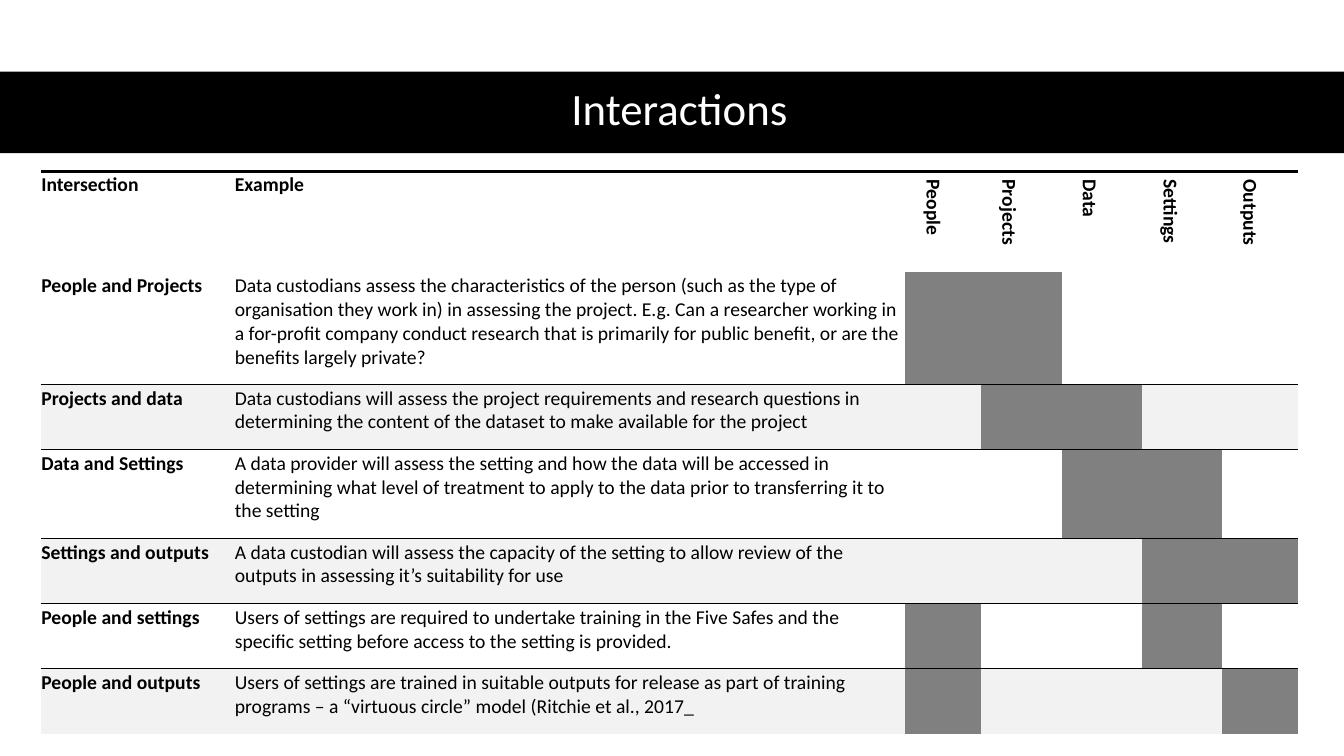
"""Build a slide with a table of how the five dimensions interact."""
from lxml import etree
from pptx import Presentation
from pptx import util as u
from pptx.dml.color import RGBColor
from pptx.enum import shapes, text
from pptx.oxml import ns

TITLE = "Interactions"
DIMENSIONS = ["People", "Projects", "Data", "Settings", "Outputs"]
HEADER = ["Intersection", "Example"] + DIMENSIONS
INTERACTIONS = [
    ("People and Projects",
     "Data custodians assess the characteristics of the person (such as the type of "
     "organisation they work in) in assessing the project. E.g. Can a researcher working in "
     "a for-profit company conduct research that is primarily for public benefit, or are the "
     "benefits largely private?", {"People", "Projects"}),
    ("Projects and data",
     "Data custodians will assess the project requirements and research questions in "
     "determining the content of the dataset to make available for the project",
     {"Projects", "Data"}),
    ("Data and Settings",
     "A data provider will assess the setting and how the data will be accessed in "
     "determining what level of treatment to apply to the data prior to transferring it to "
     "the setting", {"Data", "Settings"}),
    ("Settings and outputs",
     "A data custodian will assess the capacity of the setting to allow review of the "
     "outputs in assessing it’s suitability for use", {"Settings", "Outputs"}),
    ("People and settings",
     "Users of settings are required to undertake training in the Five Safes and the "
     "specific setting before access to the setting is provided.", {"People", "Settings"}),
    ("People and outputs",
     "Users of settings are trained in suitable outputs for release as part of training "
     "programs – a “virtuous circle” model (Ritchie et al., 2017_", {"People", "Outputs"}),
]
COL_WIDTHS = [1.92, 6.65, 0.75, 0.8, 0.8, 0.79, 0.75]
ROW_HEIGHTS = [1, 0.93] + [0.58] * 5
THEME = {"font": "Calibri", "title": 32, "body": 14, "ink": "000000", "paper": "FFFFFF",
         "band": "F2F2F2", "mark": "808080", "rule": 2.25, "hairline": 0.5}
NO_STYLE = "{2D5ABB26-0587-4C30-8999-92F81FD0307C}"


def rgb(name):
    return RGBColor.from_string(THEME[name])


def add_run(p, words, size, color, bold=False):
    r = p.add_run()
    r.text = words
    r.font.name = THEME["font"]
    r.font.size = u.Pt(THEME[size])
    r.font.bold = bold
    r.font.color.rgb = rgb(color)


def add_title(s):
    bar = s.shapes.add_shape(shapes.MSO_SHAPE.RECTANGLE, 0, u.Inches(0.71),
                             u.Inches(13.33), u.Inches(0.81))
    bar.shadow.inherit = False
    bar.fill.solid()
    bar.fill.fore_color.rgb = rgb("ink")
    bar.line.fill.background()
    sp = s.shapes.add_textbox(u.Inches(0.61), u.Inches(0.7), u.Inches(12.26), u.Inches(0.81))
    tf = sp.text_frame
    tf.word_wrap = True
    tf.vertical_anchor = text.MSO_ANCHOR.MIDDLE
    p = tf.paragraphs[0]
    p.alignment = text.PP_ALIGN.CENTER
    p.line_spacing = 0.9
    add_run(p, TITLE, "title", "paper")


def fill_cell(cell, fill):
    if fill:
        cell.fill.solid()
        cell.fill.fore_color.rgb = rgb(fill)
    else:
        cell.fill.background()


def write_cell(cell, words, bold, vertical=False):
    cell.margin_left, cell.margin_top = 0, u.Inches(0.02)
    cell.margin_right, cell.margin_bottom = u.Inches(0.05), u.Inches(0.16)
    p = cell.text_frame.paragraphs[0]
    if vertical:
        cell._tc.get_or_add_tcPr().set("vert", "vert")
        p._p.get_or_add_pPr().set("marL", str(u.Inches(0.08)))
    add_run(p, words, "body", "ink", bold)


def add_top_border(cell, width):
    ln = etree.Element(ns.qn("a:lnT"), w=str(u.Pt(THEME[width])))
    solid = etree.SubElement(ln, ns.qn("a:solidFill"))
    etree.SubElement(solid, ns.qn("a:srgbClr"), val=THEME["ink"])
    cell._tc.get_or_add_tcPr().insert(0, ln)


def add_interactions(s):
    frame = s.shapes.add_table(len(ROW_HEIGHTS), len(COL_WIDTHS), u.Inches(0.41), u.Inches(1.7),
                               u.Inches(sum(COL_WIDTHS)), u.Inches(sum(ROW_HEIGHTS)))
    table = frame.table
    table.first_row = table.horz_banding = False
    next(table._tbl.iter(ns.qn("a:tableStyleId"))).text = NO_STYLE
    for col, width in zip(table.columns, COL_WIDTHS):
        col.width = u.Inches(width)
    for row, height in zip(table.rows, ROW_HEIGHTS):
        row.height = u.Inches(height)
    for j, words in enumerate(HEADER):
        cell = table.cell(0, j)
        fill_cell(cell, None)
        write_cell(cell, words, True, words in DIMENSIONS)
        add_top_border(cell, "rule")
    for i, (name, example, marked) in enumerate(INTERACTIONS, 1):
        banded = i % 2 == 0
        for j, heading in enumerate(HEADER):
            cell = table.cell(i, j)
            fill_cell(cell, "mark" if heading in marked else "band" if banded else None)
            if banded:
                add_top_border(cell, "hairline")
        write_cell(table.cell(i, 0), name, True)
        write_cell(table.cell(i, 1), example, False)


def main():
    prs = Presentation()
    prs.slide_width, prs.slide_height = u.Inches(13.33), u.Inches(7.5)
    s = prs.slides.add_slide(prs.slide_layouts[6])
    add_title(s)
    add_interactions(s)
    prs.save("out.pptx")


if __name__ == "__main__":
    main()
